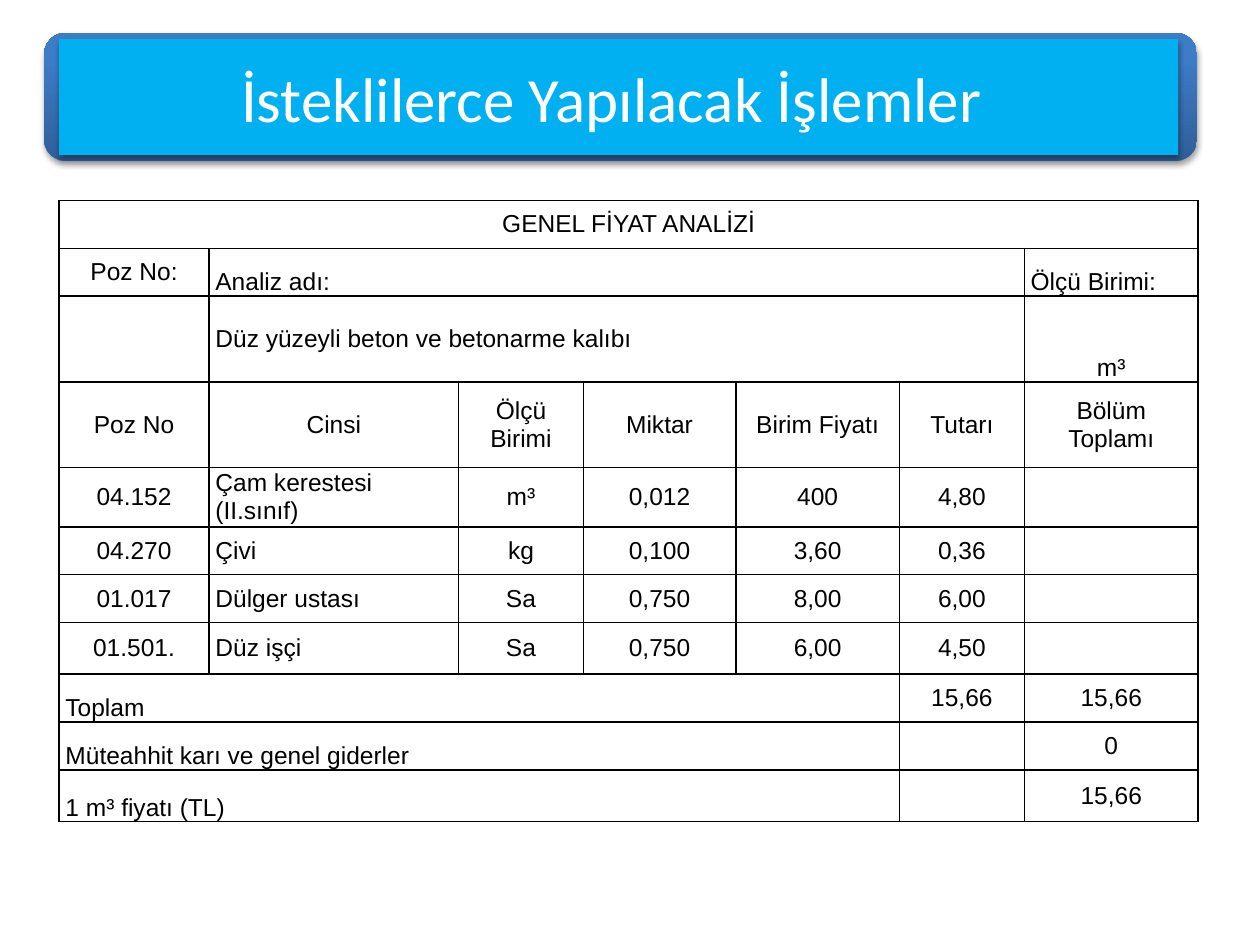
from dataclasses import dataclass
from lxml.etree import SubElement
from pptx import Presentation
from pptx.dml.color import RGBColor
from pptx.enum.shapes import MSO_SHAPE
from pptx.enum.text import MSO_ANCHOR, PP_ALIGN
from pptx.oxml import parse_xml
from pptx.oxml.ns import nsdecls, qn
from pptx.util import Pt


@dataclass(frozen=True)
class Theme:
    black: str = "000000"
    white: str = "FFFFFF"
    cyan: str = "00B0F0"
    deep_blue: str = "2F5F99"
    light_blue: str = "3D7CC7"
    title_font: str = "Calibri"
    table_font: str = "Arial"
    title_size: int = 36
    table_size: int = 14
    border: int = 1


THEME = Theme()
COLUMN_WIDTHS = [85.7, 142.6, 71.3, 87.1, 93.6, 71.3, 99.4]
ROW_HEIGHTS = [27.4, 27.4, 49, 49, 33.8, 27.4, 27.4, 29.5, 27.4, 27.4, 29.5]
ANALYSIS = [
    ["GENEL FİYAT ANALİZİ"],
    ["Poz No:", "Analiz adı:", "", "", "", "", "Ölçü Birimi:"],
    ["", "Düz yüzeyli beton ve betonarme kalıbı", "", "", "", "", "m³"],
    ["Poz No", "Cinsi", "Ölçü Birimi", "Miktar", "Birim Fiyatı", "Tutarı", "Bölüm Toplamı"],
    ["04.152", "Çam kerestesi (II.sınıf)", "m³", "0,012", "400", "4,80"],
    ["04.270", "Çivi", "kg", "0,100", "3,60", "0,36"],
    ["01.017", "Dülger ustası", "Sa", "0,750", "8,00", "6,00"],
    ["01.501.", "Düz işçi", "Sa", "0,750", "6,00", "4,50"],
    ["Toplam", "", "", "", "", "15,66", "15,66"],
    ["Müteahhit karı ve genel giderler", "", "", "", "", "", "0"],
    ["1 m³ fiyatı (TL)", "", "", "", "", "", "15,66"],
]
MERGES = {0: (0, 6), 1: (1, 5), 2: (1, 5), 8: (0, 4), 9: (0, 4), 10: (0, 4)}
TOTALS = {(row, 0) for row in (8, 9, 10)}
BOTTOM_CELLS = TOTALS | {(1, 1), (1, 6), (2, 6)}
LEFT_CELLS = TOTALS | {(1, 6)} | {(row, 1) for row in (1, 2, 4, 5, 6, 7)}


def style_text(frame, font_name, size, color, align):
    for paragraph in frame.paragraphs:
        paragraph.alignment = align
        paragraph.font.size = Pt(size)
        for run in paragraph.runs:
            run.font.name = font_name
            run.font.size = Pt(size)
            run.font.bold = False
            run.font.color.rgb = RGBColor.from_string(color)


def add_shadow(shape):
    shape.shadow.inherit = False
    effects = shape._element.spPr.find(qn("a:effectLst"))
    effects.append(parse_xml(
        f'<a:outerShdw {nsdecls("a")} blurRad="{Pt(3.1)}" dist="{Pt(1.8)}" '
        f'dir="5400000" rotWithShape="0"><a:srgbClr val="{THEME.black}">'
        '<a:alpha val="35000"/></a:srgbClr></a:outerShdw>'))


def add_banner(slide):
    banner = slide.shapes.add_shape(
        MSO_SHAPE.ROUNDED_RECTANGLE, Pt(25.2), Pt(18.7), Pt(658.8), Pt(73.4))
    banner.fill.gradient()
    banner.fill.gradient_angle = 90
    stops = zip(banner.fill.gradient_stops, (0, 0.8), (THEME.deep_blue, THEME.light_blue))
    for stop, position, color in stops:
        stop.position = position
        stop.color.rgb = RGBColor.from_string(color)
    banner.line.fill.background()
    add_shadow(banner)


def place_title(slide, text):
    title = slide.shapes.title
    slide.shapes._spTree.append(title._element)
    title.left, title.top, title.width, title.height = Pt(33.8), Pt(22.3), Pt(639.4), Pt(66.2)
    title.fill.solid()
    title.fill.fore_color.rgb = RGBColor.from_string(THEME.cyan)
    title.line.fill.background()
    add_shadow(title)
    title.text_frame.text = text
    title.text_frame.vertical_anchor = MSO_ANCHOR.MIDDLE
    style_text(title.text_frame, THEME.title_font, THEME.title_size, THEME.white,
               PP_ALIGN.CENTER)


def add_borders(cell):
    properties = cell._tc.get_or_add_tcPr()
    for side in ("a:lnL", "a:lnR", "a:lnT", "a:lnB"):
        edge = SubElement(properties, qn(side), w=str(Pt(THEME.border)))
        SubElement(SubElement(edge, qn("a:solidFill")), qn("a:srgbClr"), val=THEME.black)


def format_cell(cell, position, text):
    cell.margin_left = cell.margin_right = Pt(3.6)
    cell.margin_top = cell.margin_bottom = 0
    cell.vertical_anchor = MSO_ANCHOR.BOTTOM if position in BOTTOM_CELLS else MSO_ANCHOR.MIDDLE
    add_borders(cell)
    cell.fill.background()
    cell.text_frame.text = text
    align = PP_ALIGN.LEFT if position in LEFT_CELLS else PP_ALIGN.CENTER
    style_text(cell.text_frame, THEME.table_font, THEME.table_size, THEME.black, align)


def add_analysis_table(slide):
    table = slide.shapes.add_table(
        len(ROW_HEIGHTS), len(COLUMN_WIDTHS), Pt(33.8), Pt(114.5),
        Pt(sum(COLUMN_WIDTHS)), Pt(sum(ROW_HEIGHTS))).table
    table.first_row = table.horz_banding = False
    for column, width in zip(table.columns, COLUMN_WIDTHS):
        column.width = Pt(width)
    for row, height in zip(table.rows, ROW_HEIGHTS):
        row.height = Pt(height)
    for row, texts in enumerate(ANALYSIS):
        for column in range(len(COLUMN_WIDTHS)):
            text = texts[column] if column < len(texts) else ""
            format_cell(table.cell(row, column), (row, column), text)
    for row, (first, last) in MERGES.items():
        table.cell(row, first).merge(table.cell(row, last))


def main():
    presentation = Presentation()
    presentation.slide_width, presentation.slide_height = Pt(720), Pt(540)
    slide = presentation.slides.add_slide(presentation.slide_layouts[5])
    add_banner(slide)
    place_title(slide, "İsteklilerce Yapılacak İşlemler ")
    add_analysis_table(slide)
    presentation.save("out.pptx")


if __name__ == "__main__":
    main()
